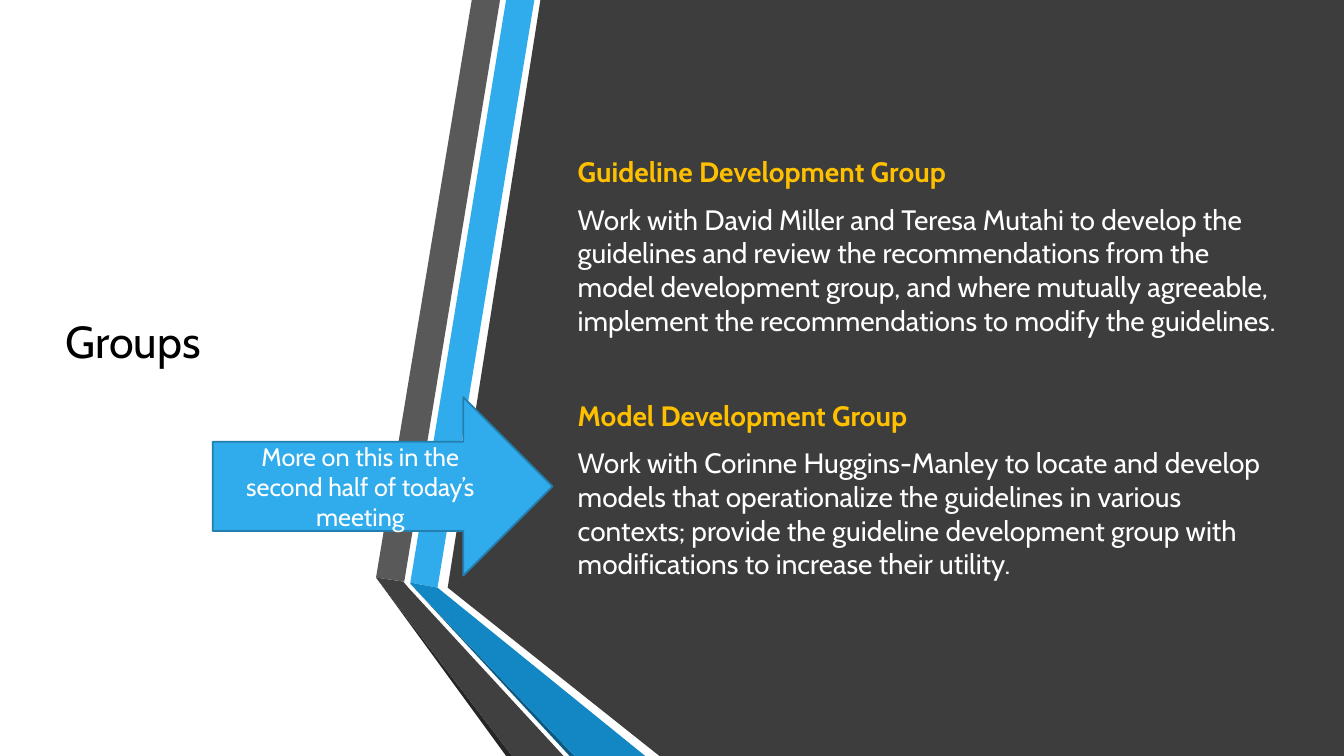
"""Builds the Groups slide: a title, two group descriptions and an arrow note."""
from pptx import Presentation
from pptx.dml.color import RGBColor
from pptx.enum import shapes, text
from pptx.oxml.ns import qn
from pptx.util import Inches, Pt
from lxml import etree

FONT = "Cabin"
COLORS = {
    "white": "FFFFFF", "black": "000000", "gold": "FFC000", "panel": "0D0D0D",
    "blue": "30ACEC", "outline": "247FAF", "blue fold": "1287C3", "blue edge": "0C5A82",
    "gray": "595959", "gray fold": "404040", "gray edge": "262626",
}
PANEL_OPACITY = 80
PANEL = [(13.33, 0), (13.33, 7.5), (6.54, 7.5), (4.44, 5.83), (5.36, 0)]
RIBBONS = [
    ("blue", [(4.07, 5.78), (4.34, 5.83), (5.3, 0), (5.02, 0)]),
    ("gray", [(4.96, 0), (4.68, 0), (3.73, 5.73), (4.01, 5.77)]),
    ("gray edge", [(3.73, 5.73), (5.02, 7.5), (5.08, 7.5)]),
    ("blue edge", [(4.07, 5.79), (5.65, 7.5), (5.7, 7.5)]),
    ("blue fold", [(4.07, 5.79), (5.7, 7.5), (6.4, 7.5), (4.34, 5.83), (4.07, 5.78)]),
    ("gray fold", [(5.59, 7.5), (4.05, 5.83), (4, 5.77), (3.73, 5.73), (5.08, 7.5)]),
]
TITLE = "Groups"
GROUPS = [
    ("Guideline Development Group",
     "Work with David Miller and Teresa Mutahi to develop the guidelines and review the "
     "recommendations from the model development group, and where mutually agreeable, "
     "implement the recommendations to modify the guidelines."),
    ("Model Development Group",
     "Work with Corinne Huggins-Manley to locate and develop models that operationalize "
     "the guidelines in various contexts; provide the guideline development group with "
     "modifications to increase their utility."),
]
NOTE = "More on this in the second half of today’s meeting"
TITLE_BOX = (0.45, 1.17, 3.33, 4.95)
BODY_BOX = (5.63, 1.17, 7.28, 4.95)
ARROW_BOX = (2.11, 3.94, 3.37, 1.77)


def color(name):
    return RGBColor.from_string(COLORS[name])


def fill_shape(shape, name):
    shape.shadow.inherit = False
    shape.fill.solid()
    shape.fill.fore_color.rgb = color(name)


def add_outline(container, points, name):
    corners = [(Inches(x), Inches(y)) for x, y in points]
    builder = container.build_freeform(*corners[0], scale=1.0)
    builder.add_line_segments(corners[1:], close=True)
    shape = builder.convert_to_shape()
    fill_shape(shape, name)
    shape.line.fill.background()
    return shape


def place_on_top(placeholder, box):
    placeholder.left, placeholder.top, placeholder.width, placeholder.height = map(Inches, box)
    element = placeholder._element
    element.getparent().append(element)
    return prepare_frame(placeholder)


def prepare_frame(shape):
    frame = shape.text_frame
    frame.word_wrap = True
    frame.auto_size = text.MSO_AUTO_SIZE.NONE
    frame.vertical_anchor = text.MSO_ANCHOR.MIDDLE
    return frame


def write(paragraph, words, size, name, bold=False, align=text.PP_ALIGN.LEFT):
    paragraph.alignment = align
    run = paragraph.add_run()
    run.text = words
    run.font.name = FONT
    run.font.size = Pt(size)
    run.font.bold = bold
    run.font.color.rgb = color(name)


def fill_body(frame):
    lines = [line for heading, description in GROUPS
             for line in ((heading, "gold", True), (description, "white", False))]
    for index, (words, name, bold) in enumerate(lines):
        paragraph = frame.add_paragraph() if index else frame.paragraphs[0]
        write(paragraph, words, 20, name, bold)
        paragraph.space_before = Pt(38 if bold and index else 4)
        paragraph.space_after = Pt(6)
        properties = paragraph._p.get_or_add_pPr()
        properties.set("marL", "0")
        properties.set("indent", "0")
        etree.SubElement(properties, qn("a:buNone"))


def main():
    presentation = Presentation()
    presentation.slide_width, presentation.slide_height = Inches(13.33), Inches(7.5)
    slide = presentation.slides.add_slide(presentation.slide_layouts[1])
    slide.background.fill.solid()
    slide.background.fill.fore_color.rgb = color("white")

    panel = add_outline(slide.shapes, PANEL, "panel")
    panel_color = panel._element.spPr.find(qn("a:solidFill"))[0]
    etree.SubElement(panel_color, qn("a:alpha")).set("val", str(PANEL_OPACITY * 1000))
    ribbon_group = slide.shapes.add_group_shape()
    for name, points in RIBBONS:
        add_outline(ribbon_group.shapes, points, name)

    title_frame = place_on_top(slide.shapes.title, TITLE_BOX)
    title_frame.margin_left = Inches(0.2)
    title_frame.margin_bottom = Inches(0.59)
    write(title_frame.paragraphs[0], TITLE, 32, "black")
    fill_body(place_on_top(slide.placeholders[1], BODY_BOX))

    arrow = slide.shapes.add_shape(shapes.MSO_SHAPE.RIGHT_ARROW, *map(Inches, ARROW_BOX))
    fill_shape(arrow, "blue")
    arrow.line.color.rgb = color("outline")
    arrow.line.width = Pt(1.25)
    write(prepare_frame(arrow).paragraphs[0], NOTE, 18, "white", align=text.PP_ALIGN.CENTER)
    presentation.save("out.pptx")


if __name__ == "__main__":
    main()
